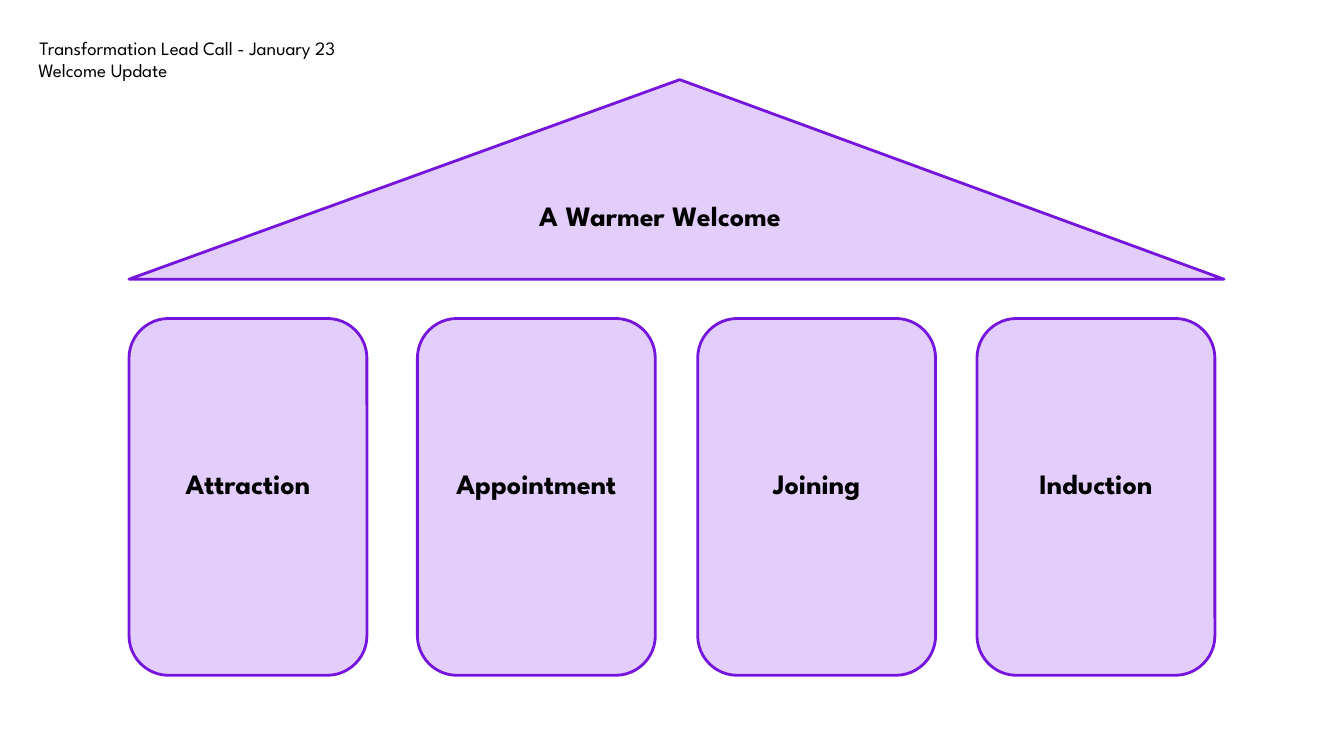
from pptx import Presentation
from pptx.dml.color import RGBColor
from pptx.enum.shapes import MSO_SHAPE
from pptx.enum.text import MSO_ANCHOR, MSO_AUTO_SIZE, PP_ALIGN
from pptx.util import Inches, Pt

TRIANGLE, ROUNDED = MSO_SHAPE.ISOSCELES_TRIANGLE, MSO_SHAPE.ROUNDED_RECTANGLE
TOP, MIDDLE, BOTTOM = MSO_ANCHOR.TOP, MSO_ANCHOR.MIDDLE, MSO_ANCHOR.BOTTOM
LEFT, CENTER = PP_ALIGN.LEFT, PP_ALIGN.CENTER
NO_FIT = MSO_AUTO_SIZE.NONE

TITLE = "Transformation Lead Call - January 23"
SUBTITLE = "Welcome Update"
ROOF = "A Warmer Welcome"
PILLARS = [("Attraction", 1.28), ("Appointment", 4.14), ("Joining", 6.92), ("Induction", 9.69)]
FONT, BLACK, LILAC, PURPLE = "League Spartan", "000000", "E3CEFB", "7414DC"
PILLAR_TOP, PILLAR_W, PILLAR_H = 3.16, 2.36, 3.54


def color(value):
    return RGBColor.from_string(value)


def write(sp, text, size=20, bold=True, align=LEFT, anchor=TOP, insets=(0.1, 0.05, 0.1, 0.05)):
    tf = sp.text_frame
    tf.word_wrap = True
    tf.auto_size = NO_FIT
    tf.vertical_anchor = anchor
    tf.margin_left, tf.margin_top, tf.margin_right, tf.margin_bottom = map(Inches, insets)
    p = tf.paragraphs[0]
    p.alignment = align
    p.space_before = Pt(0)
    r = p.add_run()
    r.text = text
    r.font.name = FONT
    r.font.size = Pt(size)
    r.font.bold = bold
    r.font.color.rgb = color(BLACK)


def place(sp, *box):
    sp.left, sp.top, sp.width, sp.height = map(Inches, box)


def add_block(s, kind, *box):
    sp = s.shapes.add_shape(kind, *map(Inches, box))
    sp.shadow.inherit = False
    sp.fill.solid()
    sp.fill.fore_color.rgb = color(LILAC)
    sp.line.color.rgb = color(PURPLE)
    sp.line.width = Pt(2)
    return sp


def main():
    prs = Presentation()
    prs.slide_width, prs.slide_height = Inches(13.33), Inches(7.5)
    s = prs.slides.add_slide(prs.slide_layouts[0])

    title, subtitle = s.shapes.title, s.placeholders[1]
    place(title, 0.38, 0.36, 6.29, 0.23)
    write(title, TITLE, size=13.5, bold=False, anchor=BOTTOM, insets=(0.01, 0, 0, 0))
    place(subtitle, 0.38, 0.58, 6.29, 0.23)
    write(subtitle, SUBTITLE, size=13.5, bold=False, insets=(0, 0, 0, 0))

    roof = add_block(s, TRIANGLE, 1.28, 0.79, 10.86, 1.98)
    roof.adjustments[0] = 0.503
    label = s.shapes.add_textbox(*map(Inches, (5.25, 1.92, 3.1, 0.44)))
    write(label, ROOF)

    for name, left in PILLARS:
        pillar = add_block(s, ROUNDED, left, PILLAR_TOP, PILLAR_W, PILLAR_H)
        write(pillar, name, align=CENTER, anchor=MIDDLE, insets=(0.1, 0.05, 0.1, 0.31))

    prs.save("out.pptx")


if __name__ == "__main__":
    main()
